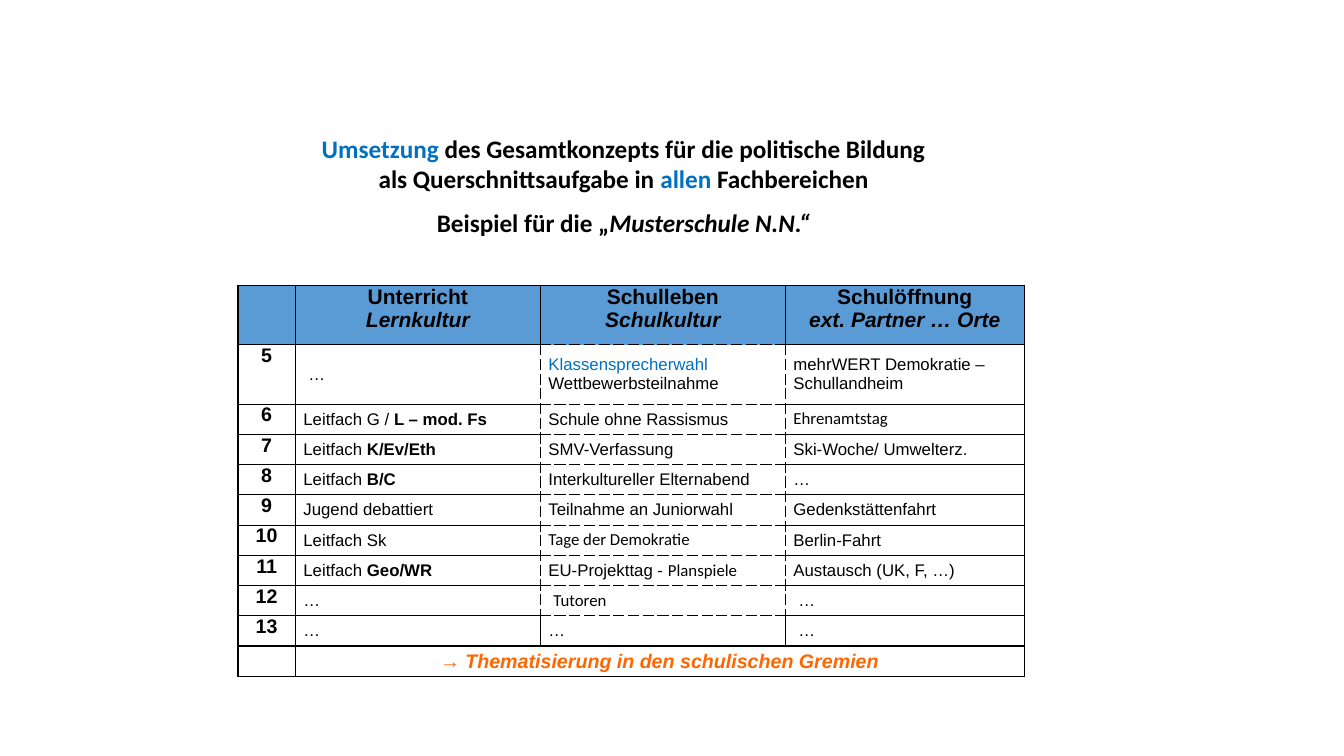
import pptx
import pptx.util
import pptx.dml.color
import pptx.enum.text
import pptx.oxml
import lxml.etree

Inches = pptx.util.Inches
Pt = pptx.util.Pt
ALIGN = pptx.enum.text.PP_ALIGN
ANCHOR = pptx.enum.text.MSO_ANCHOR

INK = {
    "black": "000000",
    "white": "FFFFFF",
    "head": "5B9BD5",
    "blue": "0070C0",
    "orange": "FF6600",
}
NS = "http://schemas.openxmlformats.org/drawingml/2006/main"
SIDES = {"L": (0, -1), "R": (0, 1), "T": (-1, 0), "B": (1, 0)}
WIDTHS = [0.57, 2.43, 2.43, 2.37]
HEIGHTS = [0.59, 0.59] + [0.3] * 9
PAD = 0.08
SHIFT = 0.05

BOLD = {"bold": True}
SLANT = {"italic": True}
BLUE = {"color": "blue"}
CAL = {"name": "Calibri"}

TITLE = [
    [("Umsetzung", BLUE), ("des Gesamtkonzepts für die politische Bildung", {})],
    [("als Querschnittsaufgabe in", {}), ("allen", BLUE), ("Fachbereichen", {})],
    [("Beispiel für die", {}), ("„", {}), ("Musterschule N.N.“", SLANT)],
]
TITLE = [
    [("Umsetzung", BLUE), (" des Gesamtkonzepts für die politische Bildung", {})],
    [("als Querschnittsaufgabe in ", {}), ("allen", BLUE), (" Fachbereichen", {})],
    [("Beispiel für die „", {}), ("Musterschule N.N.“", SLANT)],
]
HEADS = [
    ("Unterricht", "Lernkultur"),
    ("Schulleben", "Schulkultur"),
    ("Schulöffnung", "ext. Partner … Orte"),
]
PLANS = [
    ["…", [[("Klassensprecherwahl", BLUE)], [("Wettbewerbsteilnahme", {})]],
     "mehrWERT Demokratie – Schullandheim"],
    [[[("Leitfach G / ", {}), ("L – mod. Fs", BOLD)]],
     "Schule ohne Rassismus", [[("Ehrenamtstag", CAL)]]],
    [[[("Leitfach ", {}), ("K/Ev/Eth", BOLD)]], "SMV-Verfassung", "Ski-Woche/ Umwelterz."],
    [[[("Leitfach ", {}), ("B/C", BOLD)]], "Interkultureller Elternabend", "…"],
    ["Jugend debattiert", "Teilnahme an Juniorwahl", "Gedenkstättenfahrt"],
    ["Leitfach Sk", [[("Tage der Demokratie", CAL)]], "Berlin-Fahrt"],
    [[[("Leitfach ", {}), ("Geo/WR", BOLD)]],
     [[("EU-Projekttag - ", {}), ("Planspiele", CAL)]], "Austausch (UK, F, …)"],
    ["…", [[("Tutoren", CAL)]], "…"],
    ["…", "…", "…"],
]
SHIFTED = {(1, 1), (8, 2), (8, 3), (9, 3)}


def style(font, name=None, size=None, color=None, bold=None, italic=None):
    if name:
        font.name = name
    if size:
        font.size = Pt(size)
    if color:
        font.color.rgb = pptx.dml.color.RGBColor.from_string(INK[color])
    if bold is not None:
        font.bold = bold
    if italic is not None:
        font.italic = italic


def write(frame, lines, base, align=ALIGN.LEFT):
    for num, runs in enumerate(lines):
        para = frame.add_paragraph() if num else frame.paragraphs[0]
        para.alignment = align
        alone = len(runs) == 1
        style(para.font, **{**base, **(runs[0][1] if alone else {})})
        for text, look in runs:
            run = para.add_run()
            run.text = text
            if not alone:
                style(run.font, **look)


def core(row, col):
    return col == 2 and 1 <= row <= 8


def edge(cell, row, col):
    props = cell._tc.get_or_add_tcPr()
    for side, (down, right) in SIDES.items():
        dash = core(row, col) or core(row + down, col + right)
        props.append(pptx.oxml.parse_xml(
            f'<a:ln{side} xmlns:a="{NS}" w="12700"><a:solidFill>'
            f'<a:srgbClr val="{INK["black"]}"/></a:solidFill>'
            f'<a:prstDash val="{"dash" if dash else "solid"}"/></a:ln{side}>'))


def title(slide, left, top, width, height):
    box = slide.shapes.add_textbox(Inches(left), Inches(top), Inches(width), Inches(height))
    frame = box.text_frame
    frame.word_wrap = True
    write(frame, TITLE, dict(name="Calibri", size=18, color="black", bold=True), ALIGN.CENTER)
    frame.paragraphs[-1].space_before = Pt(9.8)


def grid(slide, left, top):
    table = slide.shapes.add_table(
        len(HEIGHTS), len(WIDTHS), Inches(left), Inches(top),
        Inches(sum(WIDTHS)), Inches(sum(HEIGHTS))).table
    table.first_row = table.horz_banding = False
    for col, width in zip(table.columns, WIDTHS):
        col.width = Inches(width)
    for line, height in zip(table.rows, HEIGHTS):
        line.height = Inches(height)
    last = len(HEIGHTS) - 1
    plain = dict(name="Arial", size=12, color="black", bold=False)
    for row in range(len(HEIGHTS)):
        for col in range(len(WIDTHS)):
            cell = table.cell(row, col)
            cell.margin_left = Inches(PAD + SHIFT * ((row, col) in SHIFTED))
            cell.margin_right = Inches(PAD)
            cell.margin_top = cell.margin_bottom = 0
            if col and row:
                cell.vertical_anchor = ANCHOR.MIDDLE
            edge(cell, row, col)
            cell.fill.solid()
            cell.fill.fore_color.rgb = pptx.dml.color.RGBColor.from_string(
                INK["white" if row else "head"])
            style(cell.text_frame.paragraphs[0].font, **plain)
    for col, (name, sub) in enumerate(HEADS, 1):
        write(table.cell(0, col).text_frame, [[(name, {})], [(sub, SLANT)]],
              {**plain, "size": 15, "bold": True}, ALIGN.CENTER)
    for row, plan in enumerate(PLANS, 1):
        write(table.cell(row, 0).text_frame, [[(str(row + 4), {})]],
              {**plain, "size": 14, "bold": True}, ALIGN.CENTER)
        for col, item in enumerate(plan, 1):
            lines = [[(item, {})]] if isinstance(item, str) else item
            write(table.cell(row, col).text_frame, lines, plain)
    foot = table.cell(last, 1)
    foot.merge(table.cell(last, 3))
    write(foot.text_frame, [[("→ Thematisierung in den schulischen Gremien", {})]],
          dict(name="Arial", size=14, color="orange", bold=True, italic=True), ALIGN.CENTER)


def main():
    deck = pptx.Presentation()
    deck.slide_width = Inches(13.33)
    deck.slide_height = Inches(7.5)
    slide = deck.slides.add_slide(deck.slide_layouts[6])
    title(slide, 2.4, 1.27, 7.57, 1.14)
    grid(slide, 2.36, 2.83)
    deck.save("out.pptx")


if __name__ == "__main__":
    main()
